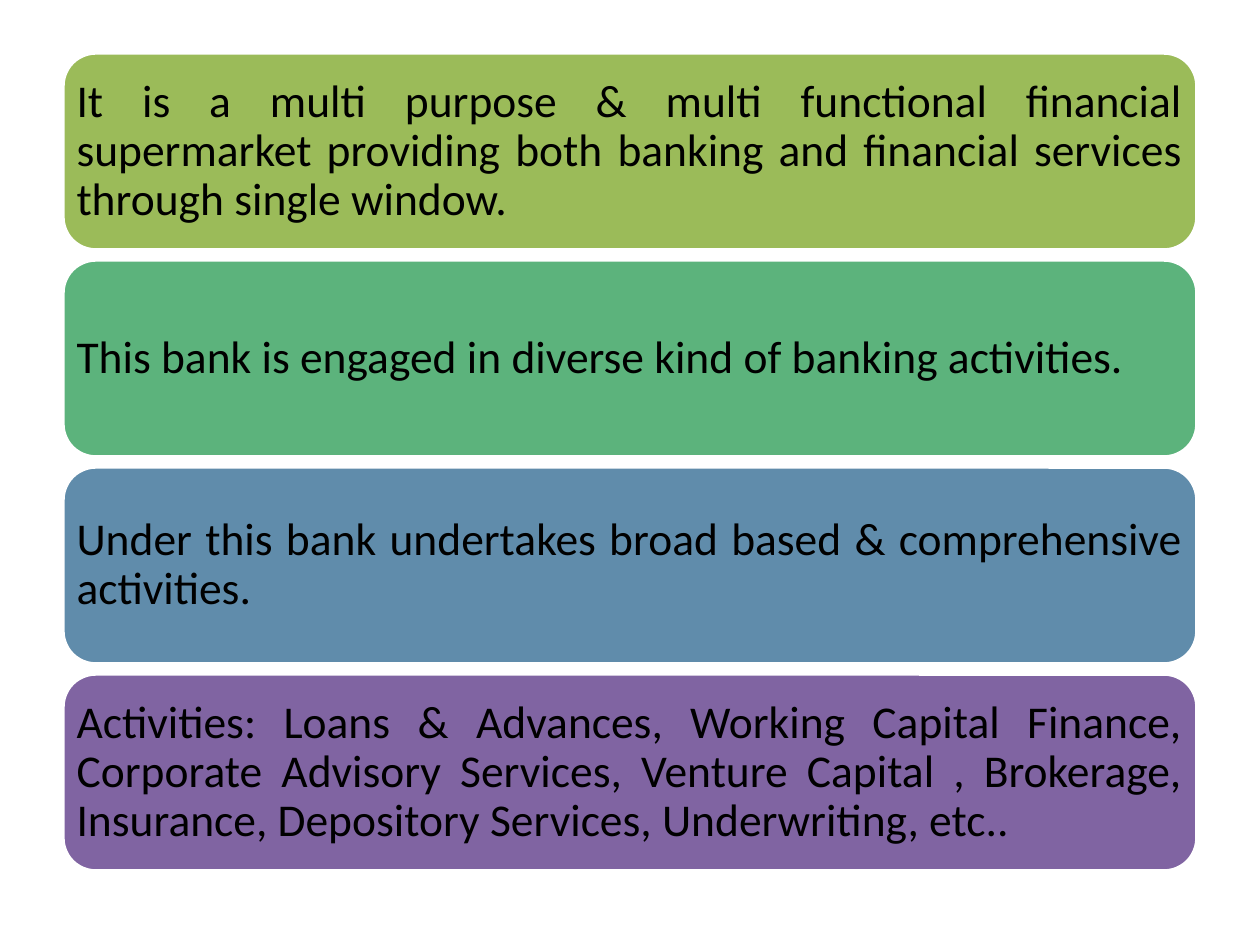
import dataclasses

import pptx
import pptx.dml.color
import pptx.enum.shapes
import pptx.enum.text
import pptx.util


@dataclasses.dataclass(frozen=True)
class Theme:
    font: str = "Calibri"
    size: int = 26
    edge: int = 2
    ink: str = "000000"
    paper: str = "FFFFFF"
    green: str = "9BBB59"
    mint: str = "5CB37C"
    blue: str = "608CAB"
    plum: str = "8064A2"


@dataclasses.dataclass(frozen=True)
class Card:
    text: str
    fill: str


THEME = Theme()
LEFT, TOP, WIDE, HIGH, STEP, INSET = 63, 53, 1134, 197, 207, 4
CARDS = [
    Card("It is a multi purpose & multi functional financial supermarket "
         "providing both banking and financial services through single window.",
         THEME.green),
    Card("This bank is engaged in diverse kind of banking activities.", THEME.mint),
    Card("Under this bank undertakes broad based & comprehensive activities.",
         THEME.blue),
    Card("Activities: Loans & Advances, Working Capital Finance, Corporate "
         "Advisory Services, Venture Capital , Brokerage, Insurance, "
         "Depository Services, Underwriting, etc..", THEME.plum),
]


def px(n: int) -> pptx.util.Emu:
    return pptx.util.Emu(round(n * 914400 / 126))


def tint(code: str) -> pptx.dml.color.RGBColor:
    return pptx.dml.color.RGBColor.from_string(code)


def write(shape, text: str, *, size: int, color: str, inset: int) -> None:
    frame = shape.text_frame
    frame.word_wrap = True
    frame.vertical_anchor = pptx.enum.text.MSO_ANCHOR.MIDDLE
    frame.margin_left = frame.margin_right = px(inset)
    frame.margin_top = frame.margin_bottom = px(inset)
    para = frame.paragraphs[0]
    para.alignment = pptx.enum.text.PP_ALIGN.JUSTIFY
    para.line_spacing = 0.9
    run = para.add_run()
    run.text = text
    run.font.name = THEME.font
    run.font.size = pptx.util.Pt(size)
    run.font.color.rgb = tint(color)


def draw(slide, card: Card, top: int) -> None:
    shape = slide.shapes.add_shape(
        pptx.enum.shapes.MSO_SHAPE.ROUNDED_RECTANGLE,
        px(LEFT), px(top), px(WIDE), px(HIGH))
    shape.shadow.inherit = False
    shape.fill.solid()
    shape.fill.fore_color.rgb = tint(card.fill)
    shape.line.color.rgb = tint(THEME.paper)
    shape.line.width = pptx.util.Pt(THEME.edge)
    write(shape, card.text, size=THEME.size, color=THEME.ink, inset=INSET)


def main() -> None:
    deck = pptx.Presentation()
    deck.slide_width, deck.slide_height = px(1260), px(945)
    slide = deck.slides.add_slide(deck.slide_layouts[6])
    for row, card in enumerate(CARDS):
        draw(slide, card, TOP + row * STEP)
    deck.save("out.pptx")


if __name__ == "__main__":
    main()
